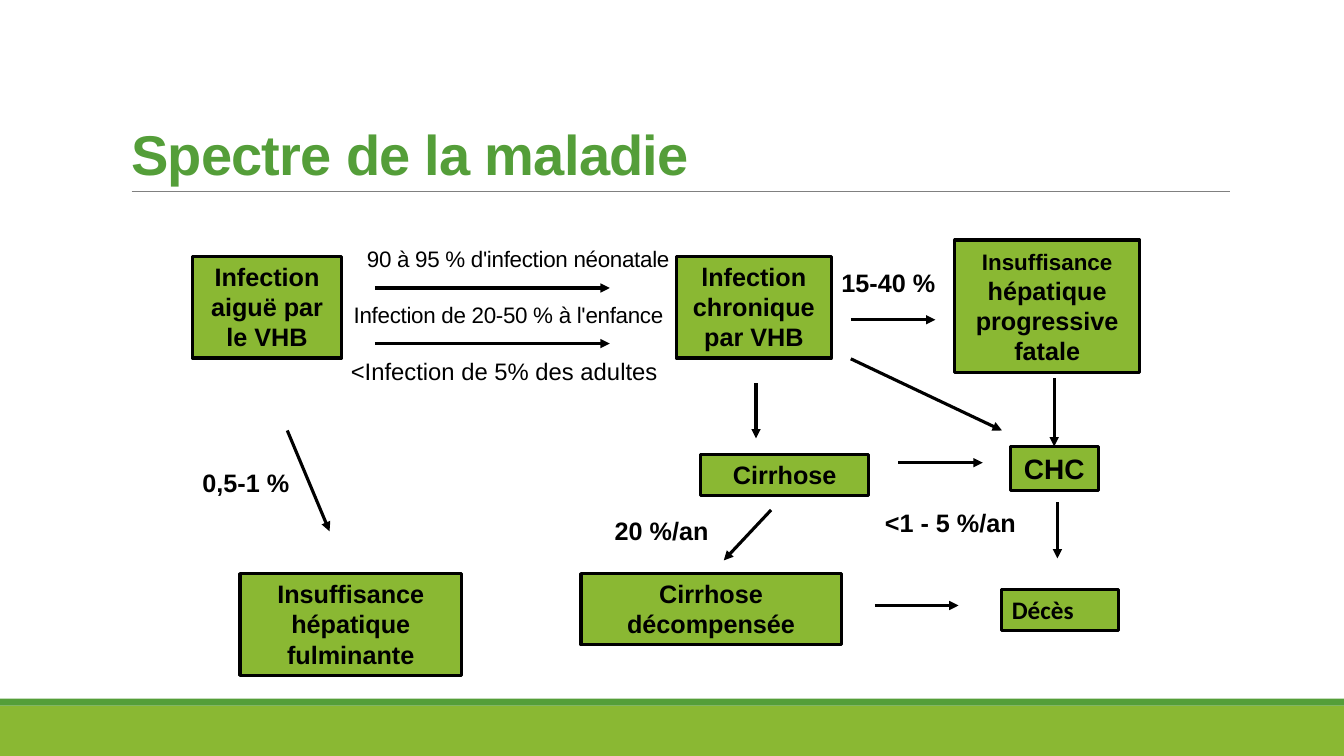
from pptx import Presentation
from pptx.dml.color import RGBColor
from pptx.enum.shapes import MSO_CONNECTOR, MSO_SHAPE
from pptx.enum.text import MSO_ANCHOR, MSO_AUTO_SIZE, PP_ALIGN
from pptx.oxml.ns import qn
from pptx.util import Pt
from lxml.etree import SubElement

WIDE, HIGH = 960, 540
LIME, GREEN, GREY, BLACK = "8AB833", "549E39", "808080", "000000"

TITLE = "Spectre de la maladie"

# name: (left, top, width, height, text, size)
BOXES = {
    "acute": (137.5, 183, 106.5, 72.7, "Infection aiguë par le VHB", 18),
    "chronic": (483, 183, 111, 72.7, "lnfection chronique par VHB", 18),
    "failure": (682, 171.5, 132, 94.5,
                "Insuffisance| hépatique progressive fatale", 18),
    "cirrhosis": (500.4, 324.7, 120.2, 29, "Cirrhose", 18),
    "cancer": (721.5, 319, 63, 31.5, "CHC", 20),
    "death": (715.7, 421.2, 83.5, 29, "Décès", 18),
    "late": (415, 409.7, 185.8, 51, "Cirrhose décompensée", 18),
    "severe": (171.4, 409.7, 158.4, 72.7,
               "Insuffisance hépatique fulminante", 18),
}

# (left, top, width, height, text, size, bold, spacing)
LABELS = [
    (594, 187.2, 108, 29, "15-40 %", 18, True, 0),
    (255, 171.5, 256, 26.6, "90 à 95 % d'infection néonatale", 16, False, -0.2),
    (245.5, 211.7, 245, 26.6, "Infection de 20-50 % à l'enfance", 16, False, -0.2),
    (243.5, 251.3, 245, 28, "<Infection de 5% des adultes", 17, False, 0),
    (137.5, 330.5, 85, 31.7, "0,5-1 %", 18, True, 0),
    (432, 364.3, 85, 29, "20 %/an", 18, True, 0),
    (625, 358.6, 117.4, 29, "<1 - 5 %/an", 18, True, 0),
]

# (from x, from y, to x, to y, box whose top it meets)
ARROWS = [
    (267.8, 205.7, 435.6, 205.7, None),
    (267.8, 245.4, 435.6, 245.4, None),
    (205.2, 307.5, 235.4, 379.5, None),
    (607.7, 228.4, 668.2, 228.4, None),
    (607.7, 256.3, 715.7, 307.5, None),
    (641.5, 330.5, 702, 330.5, None),
    (625, 432.5, 684.7, 432.5, None),
    (753, 270, 753, 319, "cancer"),
    (755.3, 358.6, 755.3, 398.9, None),
    (550.8, 364.3, 517, 400.3, None),
    (540, 273.6, 540, 313.2, None),
]


def color(code):
    return RGBColor.from_string(code)


def style(para, size, shade=BLACK, bold=True, face="Arial", gap=0):
    font = para.font
    font.size, font.bold, font.name = Pt(size), bold, face
    font.color.rgb = color(shade)
    if gap:
        para._p.pPr.find(qn("a:defRPr")).set("spc", str(round(gap * 100)))


def block(left, top, width, height, fill):
    shape = shapes.add_shape(MSO_SHAPE.RECTANGLE, Pt(left), Pt(top),
                             Pt(width), Pt(height))
    shape.shadow.inherit = False
    shape.fill.solid()
    shape.fill.fore_color.rgb = color(fill)
    shape.line.fill.background()
    return shape


def rule(x1, y1, x2, y2, shade, weight):
    line = shapes.add_connector(MSO_CONNECTOR.STRAIGHT, Pt(x1), Pt(y1),
                                Pt(x2), Pt(y2))
    line.line.color.rgb = color(shade)
    line.line.width = Pt(weight)
    SubElement(line._element.spPr, qn("a:effectLst"))
    return line


deck = Presentation()
deck.slide_width, deck.slide_height = Pt(WIDE), Pt(HIGH)
slide = deck.slides.add_slide(deck.slide_layouts[5])
shapes = slide.shapes

block(0, 504, WIDE, 36, LIME)
block(0, 499, WIDE, 5, GREEN)
rule(94, 136.6, 878.4, 136.6, GREY, 0.5)

title = shapes.title
title.left, title.top, title.width, title.height = map(Pt, (86.4, 22.3, 792, 114.5))
frame = title.text_frame
frame.text = TITLE
frame.auto_size = MSO_AUTO_SIZE.NONE
frame.vertical_anchor = MSO_ANCHOR.BOTTOM
para = frame.paragraphs[0]
para.alignment = PP_ALIGN.LEFT
para.line_spacing = 0.85
style(para, 40, GREEN, gap=-0.5)

made = {}
for name, (left, top, width, height, text, size) in BOXES.items():
    box = made[name] = block(left, top, width, height, LIME)
    box.line.color.rgb = color(BLACK)
    box.line.width = Pt(2.25)
    frame = box.text_frame
    frame.word_wrap = True
    frame.vertical_anchor = MSO_ANCHOR.TOP
    para = frame.paragraphs[0]
    for part in text.split("|"):
        para.add_run().text = part
    last = name == "death"
    para.alignment = PP_ALIGN.LEFT if last else PP_ALIGN.CENTER
    style(para, size, face="Calibri" if last else "Arial")
made["failure"].text_frame.paragraphs[0].runs[0].font.size = Pt(16)

for x1, y1, x2, y2, goal in ARROWS:
    arrow = rule(x1, y1, x2, y2, BLACK, 2.25)
    SubElement(arrow.line._get_or_add_ln(), qn("a:tailEnd"), type="triangle")
    if goal:
        arrow.end_connect(made[goal], 0)

for left, top, width, height, text, size, bold, gap in LABELS:
    label = shapes.add_textbox(Pt(left), Pt(top), Pt(width), Pt(height))
    frame = label.text_frame
    frame.word_wrap = True
    frame.text = text
    style(frame.paragraphs[0], size, bold=bold, gap=gap)

deck.save("out.pptx")
